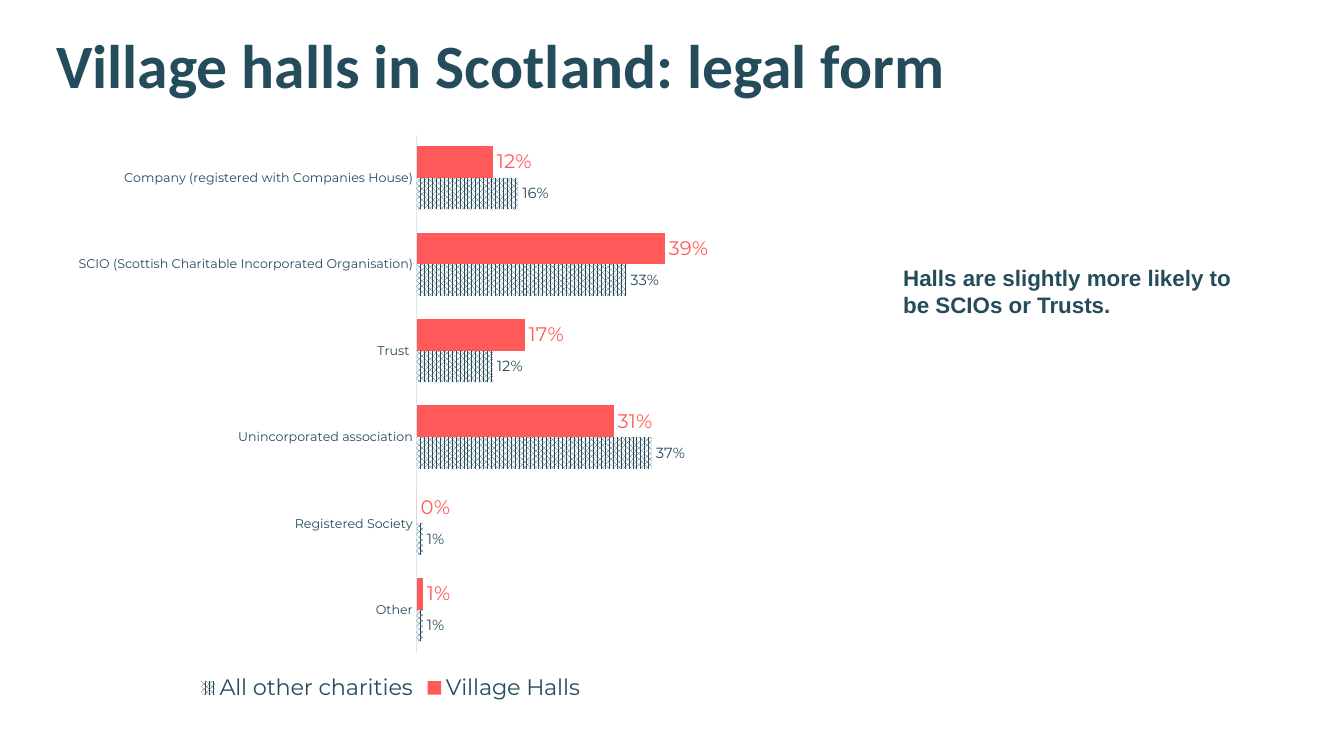
from lxml import etree
from pptx import Presentation
from pptx.chart.data import CategoryChartData
from pptx.dml.color import RGBColor
from pptx.enum.chart import XL_CHART_TYPE as ChartType
from pptx.enum.chart import XL_LABEL_POSITION as LabelPosition
from pptx.enum.chart import XL_LEGEND_POSITION as LegendPosition
from pptx.enum.chart import XL_TICK_MARK as TickMark
from pptx.enum.dml import MSO_PATTERN as Pattern
from pptx.enum.text import MSO_ANCHOR as Anchor
from pptx.oxml.ns import qn
from pptx.util import Inches, Pt

TEAL = RGBColor(0x25, 0x4C, 0x5B)
CORAL = RGBColor(0xFF, 0x59, 0x59)
PALE_BLUE = RGBColor(0xD6, 0xE8, 0xEE)
WHITE = RGBColor(0xFF, 0xFF, 0xFF)

LEGAL_FORMS = [
    "Company (registered with Companies House)",
    "SCIO (Scottish Charitable Incorporated Organisation)",
    "Trust ",
    "Unincorporated association",
    "Registered Society",
    "Other",
]
VILLAGE_HALLS = [0.12, 0.39, 0.17, 0.31, 0, 0.01]
OTHER_CHARITIES = [0.16, 0.33, 0.12, 0.37, 0.01, 0.01]
PLOT_LAYOUT = {"x": 0.54, "y": 0.02, "w": 0.44, "h": 0.89}


def set_attributes(target, **values):
    """Set each named value on the target."""
    for name, value in values.items():
        setattr(target, name, value)


def set_font(font, name, size, color, **values):
    """Apply a typeface, point size and colour."""
    set_attributes(font, name=name, size=Pt(size), **values)
    font.color.rgb = color


def add_text(slide, box, text, font_name, size, anchor, line_spacing=1.0):
    """Place a bold wrapped text in the given box."""
    frame = slide.shapes.add_textbox(*map(Inches, box)).text_frame
    set_attributes(frame, word_wrap=True, vertical_anchor=anchor)
    paragraph = frame.paragraphs[0]
    paragraph.line_spacing = line_spacing
    run = paragraph.add_run()
    run.text = text
    set_font(run.font, font_name, size, TEAL, bold=True)


def set_plot_layout(chart):
    """Fix the inner plot area as fractions of the chart."""
    plot_area = chart.plots[0]._element.getparent()
    for old_layout in plot_area.findall(qn("c:layout")):
        plot_area.remove(old_layout)
    layout = etree.Element(qn("c:layout"))
    manual = etree.SubElement(layout, qn("c:manualLayout"))
    settings = {"layoutTarget": "inner", "xMode": "edge", "yMode": "edge", **PLOT_LAYOUT}
    for name, value in settings.items():
        etree.SubElement(manual, qn(f"c:{name}")).set("val", str(value))
    plot_area.insert(0, layout)


def style_axes(chart):
    """Show the legal forms from the top and hide the value axis."""
    category_axis, value_axis = chart.category_axis, chart.value_axis
    set_attributes(
        category_axis,
        reverse_order=True,
        major_tick_mark=TickMark.NONE,
        minor_tick_mark=TickMark.NONE,
        has_major_gridlines=False,
    )
    set_font(category_axis.tick_labels.font, "Montserrat", 9, TEAL)
    category_axis.format.line.color.rgb = PALE_BLUE
    category_axis.format.line.width = Pt(0.75)
    set_attributes(
        value_axis,
        visible=False,
        has_major_gridlines=False,
        minimum_scale=0,
        maximum_scale=0.45,
    )


def style_series(plot):
    """Fill the bars and label each with its percentage."""
    halls, charities = plot.series
    halls.format.fill.solid()
    halls.format.fill.fore_color.rgb = CORAL
    fill = charities.format.fill
    fill.patterned()
    fill.pattern = Pattern.PERCENT_75
    fill.fore_color.rgb = TEAL
    fill.back_color.rgb = WHITE
    for series, size, color in ((halls, 14, CORAL), (charities, 10.5, TEAL)):
        series.invert_if_negative = False
        labels = series.data_labels
        set_attributes(
            labels,
            show_value=True,
            number_format="0%",
            number_format_is_linked=False,
            position=LabelPosition.OUTSIDE_END,
        )
        set_font(labels.font, "Montserrat", size, color)


def add_legal_form_chart(slide, box):
    """Place the clustered bar chart of legal forms in the given box."""
    chart_data = CategoryChartData(number_format="0%")
    chart_data.categories = LEGAL_FORMS
    chart_data.add_series("Village Halls", VILLAGE_HALLS)
    chart_data.add_series("All other charities", OTHER_CHARITIES)
    chart = slide.shapes.add_chart(
        ChartType.BAR_CLUSTERED, *map(Inches, box), chart_data
    ).chart
    set_attributes(chart, has_title=False, has_legend=True)
    set_font(chart.font, "Montserrat", 10, TEAL)
    set_attributes(
        chart.legend, position=LegendPosition.BOTTOM, include_in_layout=False
    )
    set_font(chart.legend.font, "Montserrat", 16, TEAL)
    plot = chart.plots[0]
    set_attributes(plot, gap_width=73, overlap=0, vary_by_categories=False)
    style_axes(chart)
    style_series(plot)
    set_plot_layout(chart)


def main():
    """Build and save the legal form slide."""
    presentation = Presentation()
    set_attributes(
        presentation, slide_width=Inches(13.33), slide_height=Inches(7.5)
    )
    slide = presentation.slides.add_slide(presentation.slide_layouts[6])
    add_text(
        slide, (0.46, 0.24, 10.98, 0.88), "Village halls in Scotland: legal form",
        "Calibri", 44, Anchor.MIDDLE, 0.9,
    )
    add_legal_form_chart(slide, (0.65, 1.22, 6.45, 5.78))
    add_text(
        slide, (8.86, 2.57, 3.55, 0.64),
        "Halls are slightly more likely to be SCIOs or Trusts.",
        "Arial", 16, Anchor.TOP,
    )
    presentation.save("out.pptx")


if __name__ == "__main__":
    main()
